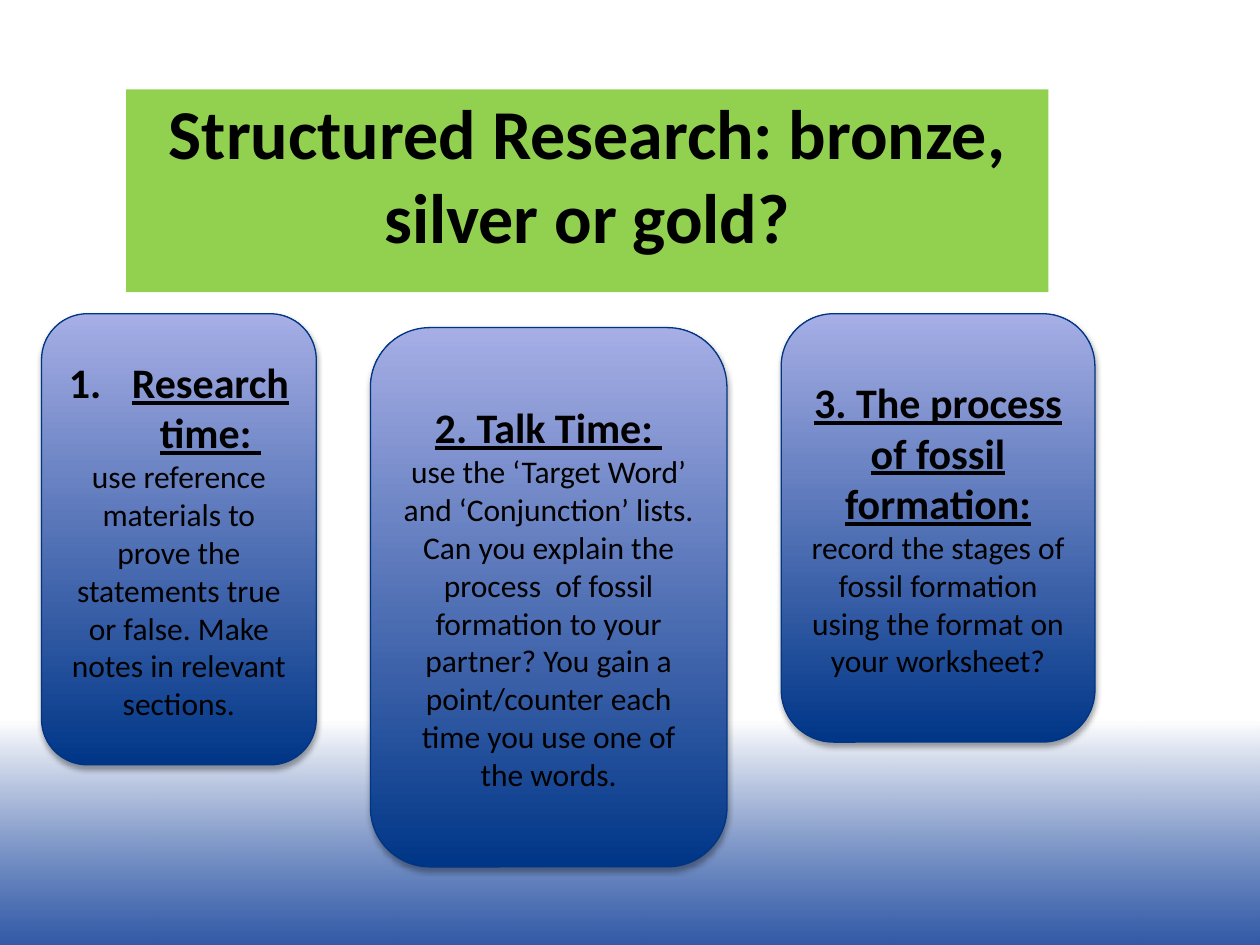
from dataclasses import dataclass

from lxml import etree
from pptx import Presentation
from pptx import util as u
from pptx.dml.color import RGBColor
from pptx.enum import shapes, text
from pptx.oxml.ns import qn


@dataclass(frozen=True)
class Theme:
    font: str = "Calibri"
    ink: str = "000000"
    banner: str = "92D050"
    card_bottom: str = "003687"
    card_top: str = "A6AEE5"
    card_line: str = "003584"
    band_bottom: str = "003192"
    band_top: str = "FFFFFF"
    title_size: int = 40
    heading_size: int = 24
    body_size: int = 18


def add_text(paragraph, words, *, theme, size, bold=False, underline=False):
    """Append a formatted run to a centred paragraph."""
    paragraph.alignment = text.PP_ALIGN.CENTER
    run = paragraph.add_run()
    run.text = words
    font = run.font
    font.name, font.size = theme.font, u.Pt(size)
    font.bold, font.underline = bold, underline
    font.color.rgb = RGBColor.from_string(theme.ink)


def fill_upward(shape, bottom, top):
    """Fill with a gradient running from the bottom edge to the top."""
    shape.fill.gradient()
    shape.fill.gradient_angle = 90
    for stop, colour in zip(shape.fill.gradient_stops, (bottom, top)):
        stop.color.rgb = RGBColor.from_string(colour)


def set_alpha(colour, percent):
    etree.SubElement(colour, qn("a:alpha"), val=str(percent * 1000))


def number_paragraph(paragraph):
    """Give a paragraph an automatic number with a hanging indent."""
    properties = paragraph._p.get_or_add_pPr()
    hang = u.Inches(0.5)
    properties.set("marL", str(hang))
    properties.set("indent", str(-hang))
    etree.SubElement(properties, qn("a:buFont"), typeface="+mj-lt")
    etree.SubElement(properties, qn("a:buAutoNum"), type="arabicPeriod")


class SlideBuilder:
    def __init__(self, slide, theme):
        self.slide, self.theme = slide, theme

    def add_shape(self, kind, box):
        shape = self.slide.shapes.add_shape(kind, *map(u.Inches, box))
        shape.shadow.inherit = False
        return shape

    def footer_band(self, box):
        band = self.add_shape(shapes.MSO_SHAPE.RECTANGLE, box)
        band.line.fill.background()
        fill_upward(band, self.theme.band_bottom, self.theme.band_top)
        set_alpha(next(band._element.spPr.iter(qn("a:srgbClr"))), 80)
        # Keep the band behind the title
        self.slide.shapes._spTree.insert(2, band._element)

    def title(self, words, box):
        title = self.slide.shapes.title
        title.left, title.top, title.width, title.height = map(u.Inches, box)
        title.fill.solid()
        title.fill.fore_color.rgb = RGBColor.from_string(self.theme.banner)
        frame = title.text_frame
        frame.word_wrap = True
        frame.auto_size = text.MSO_AUTO_SIZE.NONE
        frame.vertical_anchor = text.MSO_ANCHOR.TOP
        frame.margin_left = frame.margin_right = 0
        frame.margin_top = frame.margin_bottom = 0
        add_text(frame.paragraphs[0], words, theme=self.theme,
                 size=self.theme.title_size, bold=True)

    def card(self, heading, body, box, numbered=False, run_in=False):
        theme = self.theme
        card = self.add_shape(shapes.MSO_SHAPE.ROUNDED_RECTANGLE, box)
        fill_upward(card, theme.card_bottom, theme.card_top)
        card.line.color.rgb = RGBColor.from_string(theme.card_line)
        card.line.width = u.Pt(0.75)
        self.soft_shadow(card)
        frame = card.text_frame
        frame.word_wrap = True
        frame.vertical_anchor = text.MSO_ANCHOR.MIDDLE
        first = frame.paragraphs[0]
        if numbered:
            number_paragraph(first)
        add_text(first, heading, theme=theme, size=theme.heading_size,
                 bold=True, underline=True)
        add_text(first if run_in else frame.add_paragraph(), body,
                 theme=theme, size=theme.body_size)

    def soft_shadow(self, shape):
        effects = shape._element.spPr.find(qn("a:effectLst"))
        shadow = etree.SubElement(
            effects, qn("a:outerShdw"), blurRad=str(u.Pt(3.1)),
            dist=str(u.Pt(1.8)), dir=str(90 * 60000), rotWithShape="0")
        colour = etree.SubElement(shadow, qn("a:srgbClr"), val=self.theme.ink)
        set_alpha(colour, 35)


def main():
    deck = Presentation()
    deck.slide_width, deck.slide_height = u.Inches(10), u.Inches(7.5)
    slide = deck.slides.add_slide(deck.slide_layouts.get_by_name("Title Only"))
    builder = SlideBuilder(slide, Theme())

    # Background and title
    builder.footer_band((0, 5.71, 10, 1.79))
    builder.title("Structured Research: bronze, silver or gold?",
                  (1, 0.71, 7.32, 1.61))

    # Three stages of the lesson
    builder.card(
        "Research time: ",
        "use reference materials to prove the statements true or false. "
        "Make notes in relevant sections.",
        (0.33, 2.49, 2.18, 3.58), numbered=True)
    builder.card(
        "3. The process of fossil formation:",
        " record the stages of fossil formation using the format on your "
        "worksheet?",
        (6.2, 2.49, 2.49, 3.4), run_in=True)
    builder.card(
        "2. Talk Time: ",
        "use the ‘Target Word’ and ‘Conjunction’ lists. Can you explain the "
        "process  of fossil formation to your partner? You gain a "
        "point/counter each time you use one of the words.",
        (2.94, 2.6, 2.83, 4.28))

    deck.save("out.pptx")


if __name__ == "__main__":
    main()
